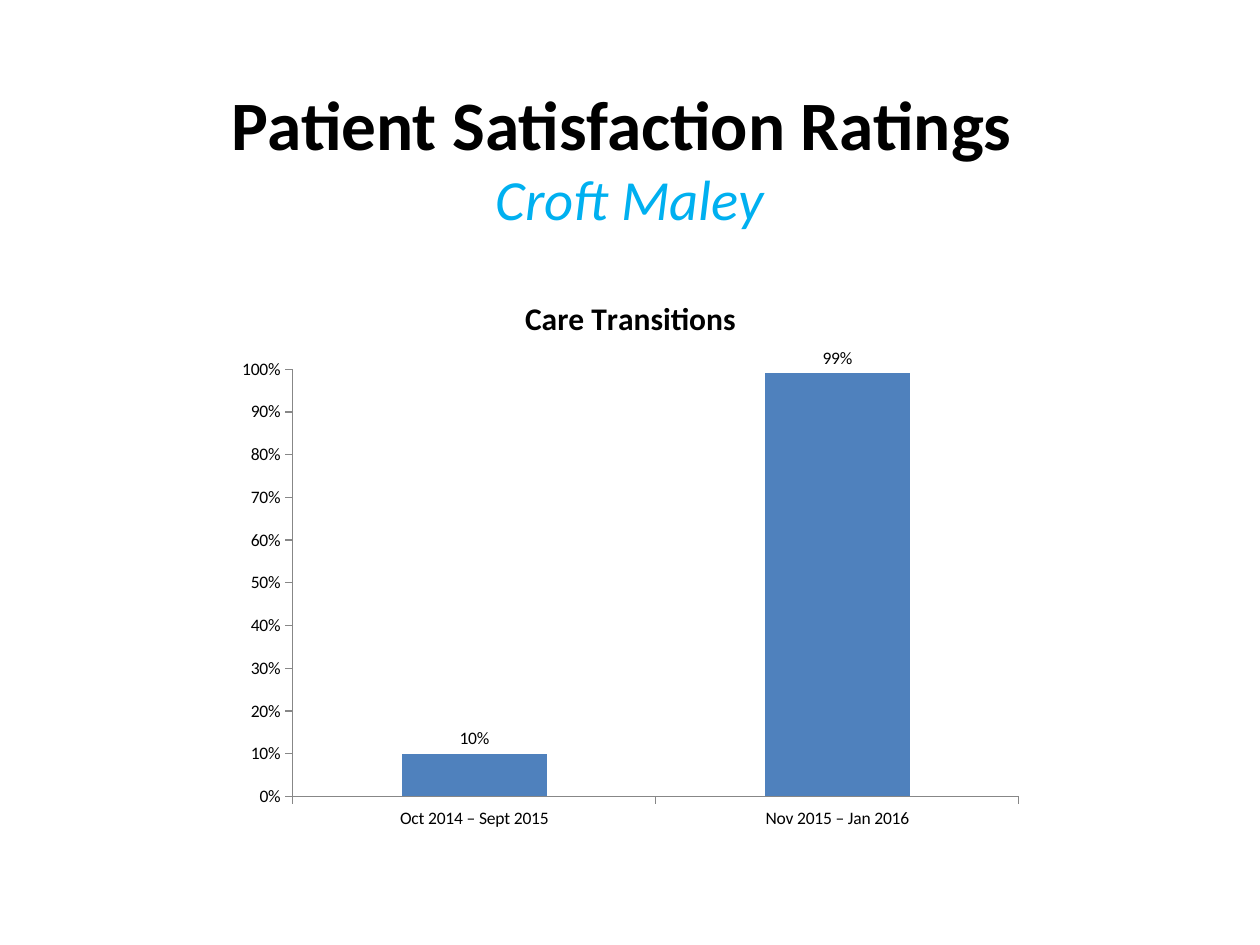
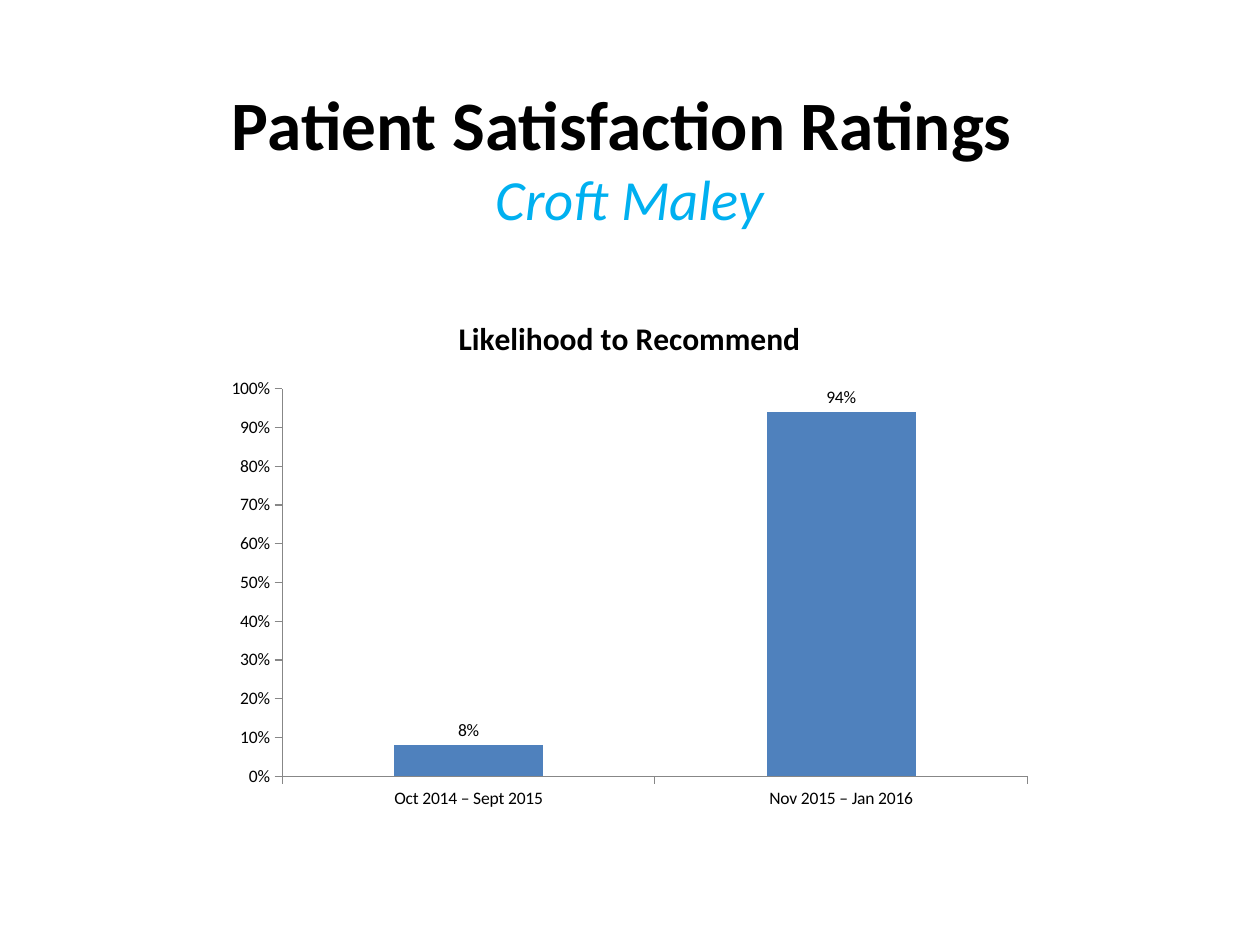
from dataclasses import dataclass

from pptx import Presentation
from pptx import util as u
from pptx.chart.data import CategoryChartData
from pptx.dml.color import RGBColor
from pptx.enum import chart as ch
from pptx.enum import text

SCALE = 914400 / 126


@dataclass(frozen=True)
class Theme:
    face: str = "Calibri"
    ink: str = "000000"
    accent: str = "00B0F0"
    bar: str = "4F81BD"
    axis: str = "878787"
    head: float = 39.6
    sub: float = 32.4
    title: float = 18
    label: float = 10


THEME = Theme()
HEAD = "Patient Satisfaction Ratings "
SOURCE = "Croft Maley"
PERIODS = ["Oct 2014 – Sept 2015", "Nov 2015 – Jan 2016"]
RATINGS = [
    ("Care Transitions", (0.10, 0.99), (226, 273, 809, 567)),
    ("Likelihood to Recommend", (0.08, 0.94), (215, 294, 829, 525)),
]


def px(*sizes):
    return [u.Emu(round(size * SCALE)) for size in sizes]


def style(font, size, color=THEME.ink, bold=False, italic=False):
    font.name = THEME.face
    font.size = u.Pt(size)
    font.color.rgb = RGBColor.from_string(color)
    font.bold = bold
    font.italic = italic


def add_head(slide):
    frame = slide.shapes.add_textbox(*px(63, 83, 1134, 147)).text_frame
    frame.word_wrap = True
    frame.vertical_anchor = text.MSO_ANCHOR.MIDDLE
    para = frame.paragraphs[0]
    para.text = f"{HEAD}\v{SOURCE}"
    para.alignment = text.PP_ALIGN.CENTER
    head, source = para.runs
    style(head.font, THEME.head, bold=True)
    style(source.font, THEME.sub, THEME.accent, italic=True)


def style_axis(axis):
    axis.has_major_gridlines = False
    axis.major_tick_mark = ch.XL_TICK_MARK.OUTSIDE
    axis.minor_tick_mark = ch.XL_TICK_MARK.NONE
    axis.format.line.color.rgb = RGBColor.from_string(THEME.axis)
    axis.format.line.width = u.Pt(0.75)


def add_bars(slide, name, values, box):
    data = CategoryChartData(number_format="0%")
    data.categories = PERIODS
    data.add_series(name, values)
    kind = ch.XL_CHART_TYPE.COLUMN_CLUSTERED
    chart = slide.shapes.add_chart(kind, *px(*box), data).chart
    style(chart.font, THEME.label)
    chart.has_legend = False

    chart.has_title = True
    chart.chart_title.include_in_layout = False
    para = chart.chart_title.text_frame.paragraphs[0]
    para.text = name
    style(para.runs[0].font, THEME.title, bold=True)

    style_axis(chart.category_axis)
    scale = chart.value_axis
    style_axis(scale)
    scale.minimum_scale, scale.maximum_scale = 0, 1
    scale.major_unit = 0.1
    scale.tick_labels.number_format = "0%"
    scale.tick_labels.number_format_is_linked = False

    plot = chart.plots[0]
    plot.gap_width = 150
    plot.vary_by_categories = False
    fill = plot.series[0].format.fill
    fill.solid()
    fill.fore_color.rgb = RGBColor.from_string(THEME.bar)

    plot.has_data_labels = True
    labels = plot.data_labels
    labels.show_value = True
    labels.number_format = "0%"
    labels.number_format_is_linked = False
    labels.position = ch.XL_LABEL_POSITION.OUTSIDE_END
    style(labels.font, THEME.label)


def main():
    deck = Presentation()
    deck.slide_width, deck.slide_height = px(1260, 945)
    for name, values, box in RATINGS:
        slide = deck.slides.add_slide(deck.slide_layouts[6])
        add_bars(slide, name, values, box)
        add_head(slide)
    deck.save("out.pptx")


if __name__ == "__main__":
    main()
